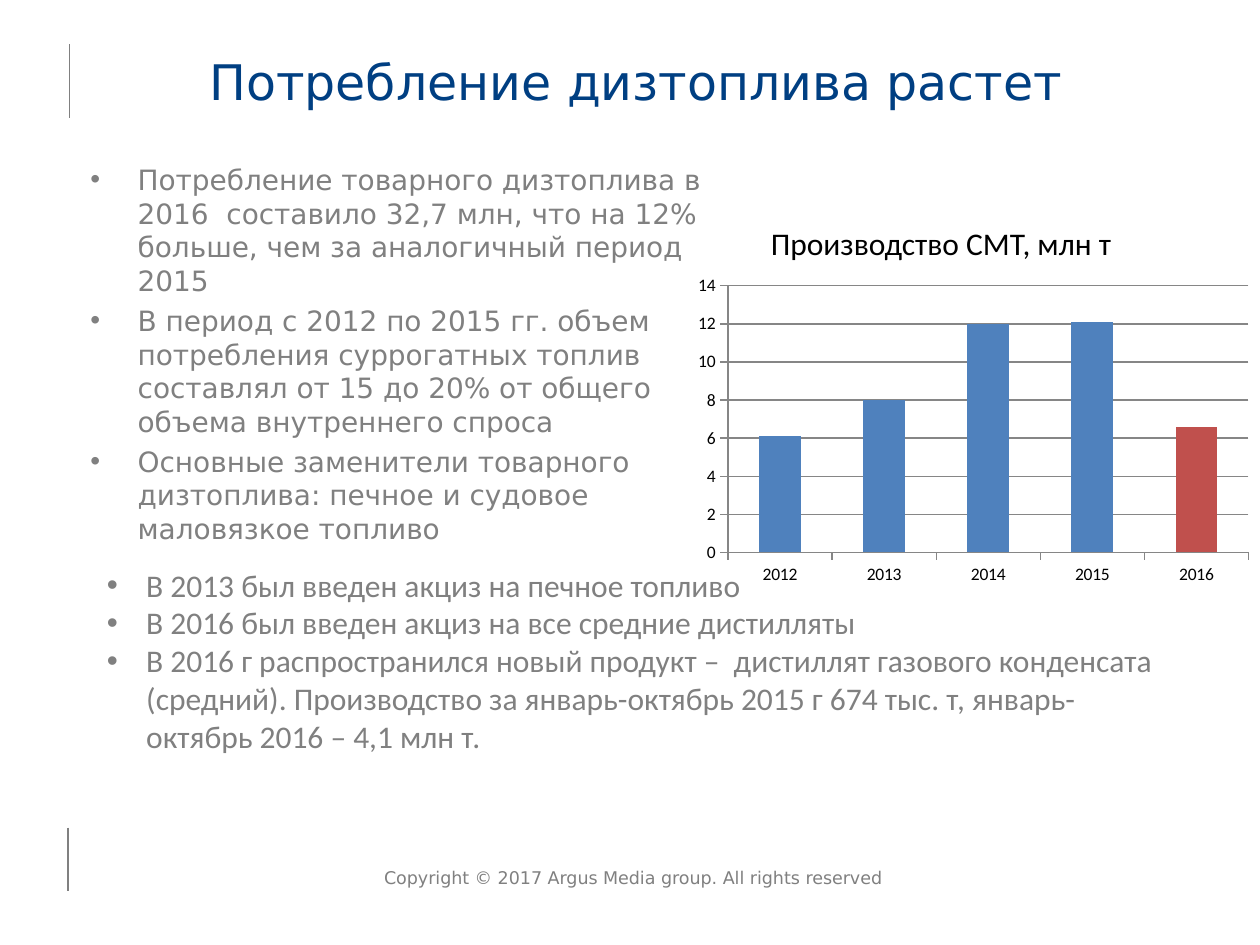
from lxml import etree
from pptx import Presentation
from pptx import util as u
from pptx.chart import data
from pptx.dml import color
from pptx.enum import chart as ch, shapes, text
from pptx.oxml import ns

Pt = u.Pt
theme = {
    "navy": color.RGBColor.from_string("003F82"),
    "gray": color.RGBColor.from_string("808080"),
    "black": color.RGBColor.from_string("000000"),
    "blue": color.RGBColor.from_string("4F81BD"),
    "red": color.RGBColor.from_string("C0504D"),
    "axis": color.RGBColor.from_string("868686"),
    "wide": "DejaVu Sans", "plain": "Calibri",
    "title": 28, "head": 18, "body": 16, "small": 10,
}


def style(font, face, size, tint):
    for key, val in {"name": theme[face], "size": Pt(theme[size]), "bold": False}.items():
        setattr(font, key, val)
    font.color.rgb = theme[tint]


def write(frame, lines, face, size, tint, indent=0, gap=0):
    """Fill a frame with paragraphs; an indent makes them bullets."""
    for i, line in enumerate(lines):
        para = frame.paragraphs[0] if i == 0 else frame.add_paragraph()
        para.text = line
        if i and gap:
            para.space_before = Pt(gap)
        if indent:
            props = para._p.get_or_add_pPr()
            props.set("marL", str(Pt(indent)))
            props.set("indent", str(-Pt(indent)))
            etree.SubElement(props, ns.qn("a:buFont")).set("typeface", "Arial")
            etree.SubElement(props, ns.qn("a:buChar")).set("char", "•")
        style(para.font, face, size, tint)


prs = Presentation()
prs.slide_width, prs.slide_height = Pt(720), Pt(540)
slide = prs.slides.add_slide(prs.slide_layouts[5])

# Margin rules
for x, top, end in [(39.6, 25.2, 67.7), (38.9, 473, 509)]:
    rule = slide.shapes.add_connector(
        shapes.MSO_CONNECTOR.STRAIGHT, Pt(x), Pt(top), Pt(x), Pt(end))
    rule.line.color.rgb = theme["gray"]
    rule.line.width = Pt(0.75)
    etree.SubElement(rule._element.spPr, ns.qn("a:effectLst"))

# Title
title = slide.shapes.title
for key, val in {"left": 48.2, "top": 15.1, "width": 630, "height": 48.2}.items():
    setattr(title, key, Pt(val))
frame = title.text_frame
form = {"margin_left": 0, "margin_right": 0, "margin_top": 0, "margin_bottom": 0,
        "vertical_anchor": text.MSO_ANCHOR.BOTTOM, "auto_size": text.MSO_AUTO_SIZE.NONE}
for key, val in form.items():
    setattr(frame, key, val)
write(frame, ["Потребление дизтоплива растет"], "wide", "title", "navy")
frame.paragraphs[0].alignment = text.PP_ALIGN.CENTER

# Text boxes: place, wrap, grow, lines, face, size, tint, indent, gap
facts = [
    "Потребление товарного дизтоплива в 2016  составило 32,7 млн, что на 12% больше, "
    "чем за аналогичный период 2015",
    "В период с 2012 по 2015 гг. объем потребления суррогатных топлив составлял "
    "от 15 до 20% от общего объема внутреннего спроса",
    "Основные заменители товарного дизтоплива: печное и судовое маловязкое топливо",
]
taxes = [
    "В 2013 был введен акциз на печное топливо",
    "В 2016 был введен акциз на все средние дистилляты",
    "В 2016 г распространился новый продукт –  дистиллят газового конденсата (средний). "
    "Производство за январь-октябрь 2015 г 674 тыс. т, январь-октябрь 2016 – 4,1 млн т.",
]
label = ["Производство СМТ, млн т"]
rights = ["Copyright © 2017 Argus Media group. All rights reserved"]
boxes = [
    ((44.6, 89.3, 385.2, 231.1), True, False, facts, "wide", "body", "gray", 27, 3.8),
    ((433.4, 124.6, 211, 28.8), False, True, label, "plain", "head", "black", 0, 0),
    ((54, 319.7, 623.5, 116.6), True, True, taxes, "plain", "head", "gray", 22.5, 0),
    ((212.4, 491.8, 360, 19.4), True, True, rights, "wide", "small", "gray", 0, 0),
]
for place, wrap, grow, *words in boxes:
    frame = slide.shapes.add_textbox(*map(Pt, place)).text_frame
    frame.word_wrap = wrap
    if grow:
        frame.auto_size = text.MSO_AUTO_SIZE.SHAPE_TO_FIT_TEXT
    write(frame, *words)

# Column chart with the last year picked out
table = data.CategoryChartData()
table.categories = ["2012", "2013", "2014", "2015", "2016"]
table.add_series("Series 1", [6.1, 8, 12, 12.1, 6.6])
chart = slide.shapes.add_chart(
    ch.XL_CHART_TYPE.COLUMN_CLUSTERED, Pt(392.4), Pt(154.1), Pt(327.6), Pt(183.6), table).chart
chart.has_legend = chart.has_title = False
style(chart.font, "plain", "small", "black")
plot = chart.plots[0]
plot.gap_width = 150
plot.vary_by_categories = False
bars = plot.series[0]
for i in range(5):
    fill = bars.points[i].format.fill
    fill.solid()
    fill.fore_color.rgb = theme["red" if i == 4 else "blue"]

# Axes
scale = chart.value_axis
for key, val in {"minimum_scale": 0, "maximum_scale": 14, "major_unit": 2,
                 "has_major_gridlines": True}.items():
    setattr(scale, key, val)
for axis in (scale, chart.category_axis):
    axis.major_tick_mark = ch.XL_TICK_MARK.OUTSIDE
    axis.format.line.color.rgb = theme["axis"]
scale.major_gridlines.format.line.color.rgb = theme["axis"]

prs.save("out.pptx")
